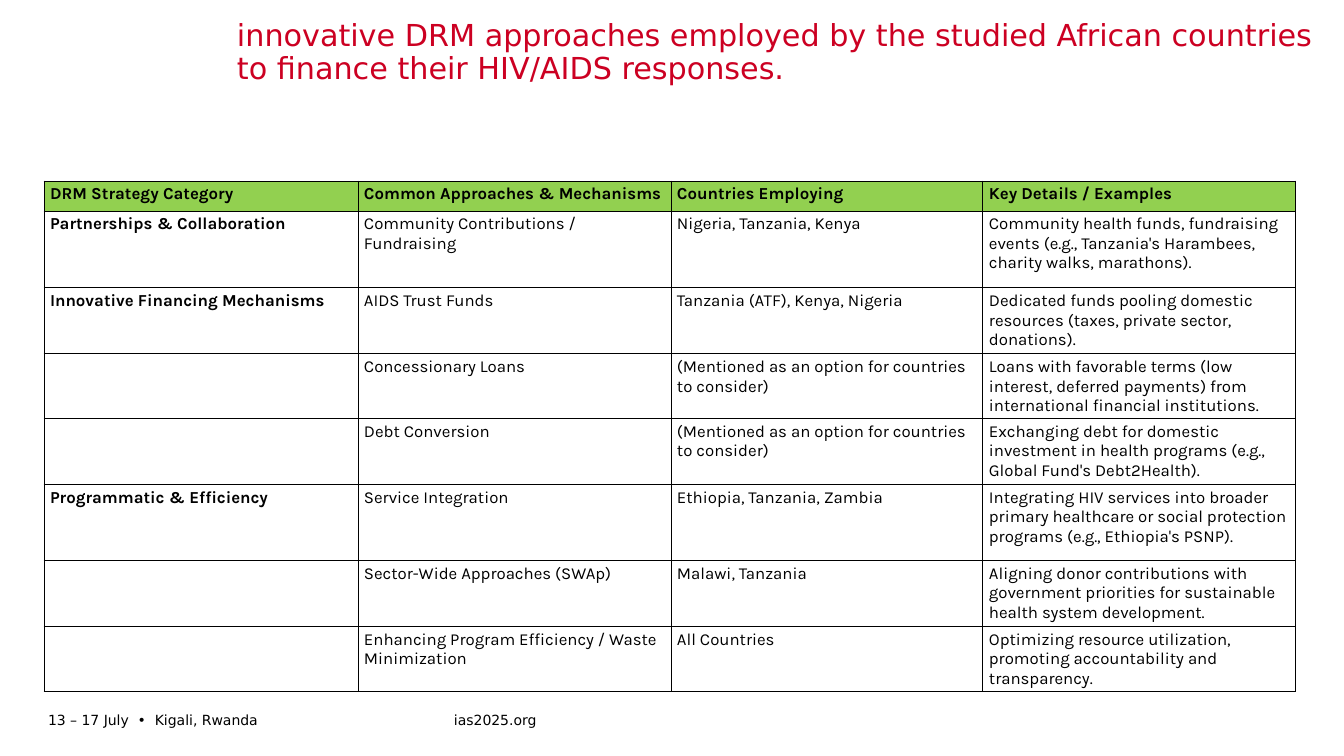
from dataclasses import dataclass

from lxml import etree
from pptx import Presentation
from pptx.dml.color import RGBColor
from pptx.enum.text import MSO_ANCHOR, MSO_AUTO_SIZE, PP_ALIGN
from pptx.oxml.ns import qn
from pptx.util import Emu, Pt

LEFT = PP_ALIGN.LEFT
TOP, MIDDLE, BOTTOM = MSO_ANCHOR.TOP, MSO_ANCHOR.MIDDLE, MSO_ANCHOR.BOTTOM
NO_FIT = MSO_AUTO_SIZE.NONE
TITLE_ONLY = 5
EMU_PER_PX = 914400 / 100.8


@dataclass(frozen=True)
class Theme:
    sans: str = "DejaVu Sans"
    table_face: str = "Karla"
    red: str = "CC0022"
    black: str = "000000"
    green: str = "92D050"
    white: str = "FFFFFF"
    title_size: float = 21.6
    table_size: float = 12
    footer_size: float = 10
    border: float = 0.75


THEME = Theme()
TITLE = (
    "innovative DRM approaches employed by the studied African countries "
    "to finance their HIV/AIDS responses."
)
FOOTERS = [
    ("13 – 17 July  •  Kigali, Rwanda", (48, 708, 406, 24)),
    ("ias2025.org", (454, 708, 194, 24)),
]
COLUMN_WIDTHS = [314, 313, 312, 313]
ROW_HEIGHTS = [30, 77, 66, 65, 66, 76, 66, 64]
OPTION = "(Mentioned as an option for countries to consider)"
STRATEGIES = [
    ("DRM Strategy Category", "Common Approaches & Mechanisms",
     "Countries Employing", "Key Details / Examples"),
    ("Partnerships & Collaboration", "Community Contributions / Fundraising",
     "Nigeria, Tanzania, Kenya",
     "Community health funds, fundraising events "
     "(e.g., Tanzania's Harambees, charity walks, marathons)."),
    ("Innovative Financing Mechanisms", "AIDS Trust Funds",
     "Tanzania (ATF), Kenya, Nigeria",
     "Dedicated funds pooling domestic resources "
     "(taxes, private sector, donations)."),
    ("", "Concessionary Loans", OPTION,
     "Loans with favorable terms (low interest, deferred payments) "
     "from international financial institutions."),
    ("", "Debt Conversion", OPTION,
     "Exchanging debt for domestic investment in health programs "
     "(e.g., Global Fund's Debt2Health)."),
    ("Programmatic & Efficiency", "Service Integration",
     "Ethiopia, Tanzania, Zambia",
     "Integrating HIV services into broader primary healthcare "
     "or social protection programs (e.g., Ethiopia's PSNP)."),
    ("", "Sector-Wide Approaches (SWAp)", "Malawi, Tanzania",
     "Aligning donor contributions with government priorities "
     "for sustainable health system development."),
    ("", "Enhancing Program Efficiency / Waste Minimization", "All Countries",
     "Optimizing resource utilization, promoting accountability "
     "and transparency."),
]


def px(length):
    return Emu(round(length * EMU_PER_PX))


def apply_format(target, values):
    for name, value in values.items():
        setattr(target, name, value)


def write_text(frame, text, face, size, color, bold=False):
    para = frame.paragraphs[0]
    para.alignment = LEFT
    span = para.add_run()
    span.text = text
    apply_format(span.font, {"name": face, "size": Pt(size), "bold": bold})
    span.font.color.rgb = RGBColor.from_string(color)
    return para


def set_frame(frame, anchor):
    apply_format(frame, {
        "word_wrap": True, "auto_size": NO_FIT, "vertical_anchor": anchor,
        "margin_left": 0, "margin_right": 0, "margin_top": 0, "margin_bottom": 0,
    })


def draw_title(page, box):
    title = page.shapes.title
    apply_format(title, dict(zip(("left", "top", "width", "height"), map(px, box))))
    set_frame(title.text_frame, BOTTOM)
    para = write_text(title.text_frame, TITLE, THEME.sans, THEME.title_size, THEME.red)
    apply_format(para, {"line_spacing": 0.9, "space_before": Pt(0)})


def draw_footer(page, text, box):
    frame = page.shapes.add_textbox(*map(px, box)).text_frame
    set_frame(frame, MIDDLE)
    write_text(frame, text, THEME.sans, THEME.footer_size, THEME.black)


def add_borders(cell):
    properties = cell._tc.get_or_add_tcPr()
    for index, side in enumerate(("lnL", "lnR", "lnT", "lnB")):
        line = etree.Element(qn(f"a:{side}"), w=str(Pt(THEME.border)))
        fill = etree.SubElement(line, qn("a:solidFill"))
        etree.SubElement(fill, qn("a:srgbClr"), val=THEME.black)
        properties.insert(index, line)


def draw_cell(cell, text, is_header, is_category):
    apply_format(cell, {
        "margin_left": px(6), "margin_right": px(6),
        "margin_top": px(3), "margin_bottom": px(3), "vertical_anchor": TOP,
    })
    cell.fill.solid()
    cell.fill.fore_color.rgb = RGBColor.from_string(
        THEME.green if is_header else THEME.white)
    add_borders(cell)
    if text:
        write_text(cell.text_frame, text, THEME.table_face, THEME.table_size,
                   THEME.black, is_header or is_category)


def draw_strategy_table(page, left, top):
    box = (left, top, sum(COLUMN_WIDTHS), sum(ROW_HEIGHTS))
    table = page.shapes.add_table(
        len(ROW_HEIGHTS), len(COLUMN_WIDTHS), *map(px, box)).table
    table.horz_banding = False
    for column, width in zip(table.columns, COLUMN_WIDTHS):
        column.width = px(width)
    for row, height in zip(table.rows, ROW_HEIGHTS):
        row.height = px(height)
    for row_index, texts in enumerate(STRATEGIES):
        for column_index, text in enumerate(texts):
            draw_cell(table.cell(row_index, column_index), text,
                      row_index == 0, column_index == 0)


def main():
    deck = Presentation()
    apply_format(deck, {"slide_width": px(1344), "slide_height": px(756)})
    page = deck.slides.add_slide(deck.slide_layouts[TITLE_ONLY])
    for text, box in FOOTERS:
        draw_footer(page, text, box)
    draw_title(page, (237, 13, 1082, 73))
    draw_strategy_table(page, 44, 181)
    deck.save("out.pptx")


if __name__ == "__main__":
    main()
